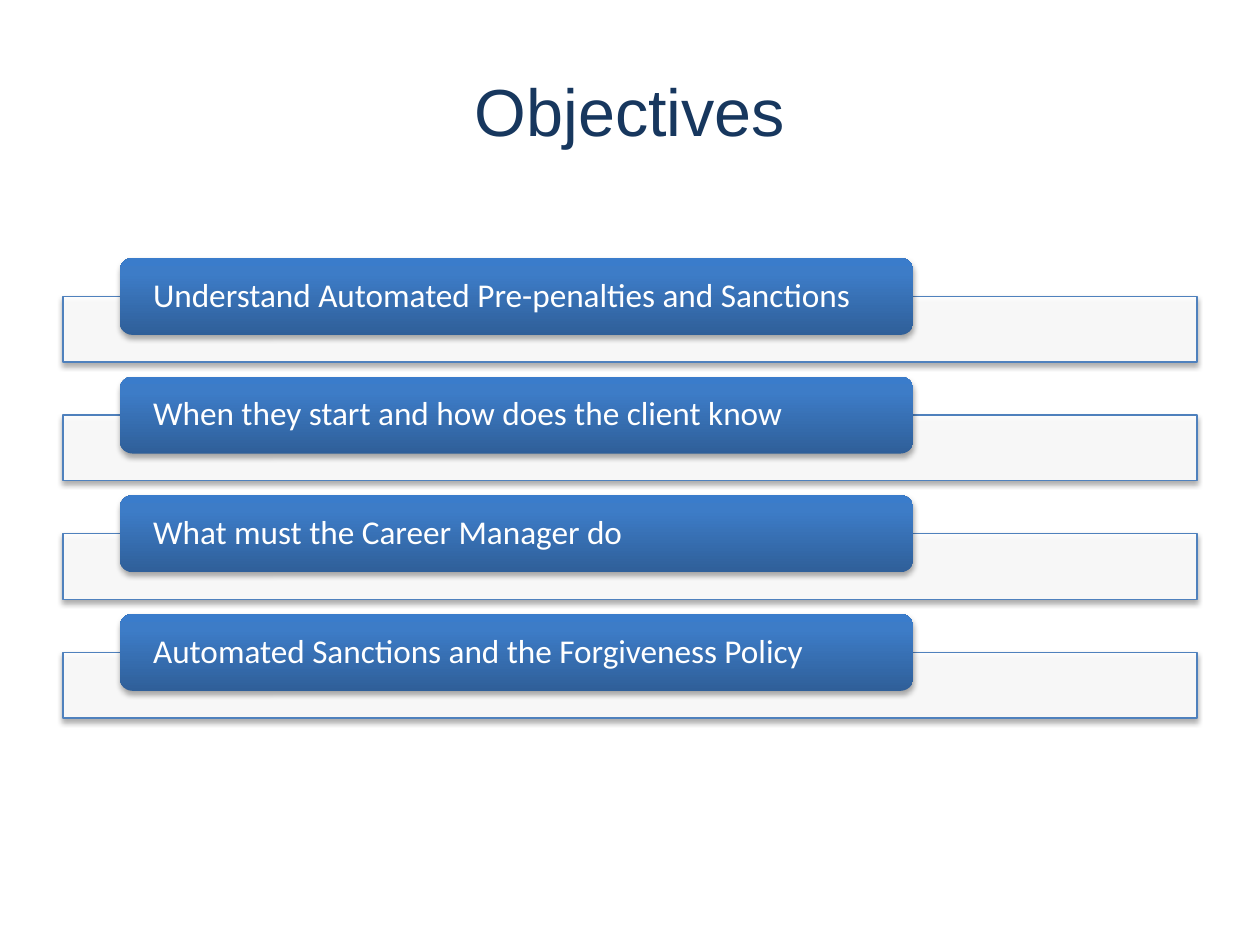
from lxml import etree
from pptx import Presentation
from pptx.dml.color import RGBColor
from pptx.enum.shapes import MSO_SHAPE as SHAPE
from pptx.enum.text import MSO_ANCHOR as ANCHOR, PP_ALIGN as ALIGN
from pptx.oxml.ns import qn
from pptx.util import Pt

OBJECTIVES = [
    "Understand Automated Pre-penalties and Sanctions",
    "When they start and how does the client know",
    "What must the Career Manager do",
    "Automated Sanctions and the Forgiveness Policy",
]
CARD_STOPS = [(0, "2F5F99"), (80, "3D7CC7"), (100, "3A7CCB")]
ROW_PITCH = 67.8


def rgb(color):
    return RGBColor.from_string(color)


def add_color(parent, color, alpha=None):
    clr = etree.SubElement(parent, qn("a:srgbClr"), val=color)
    if alpha is not None:
        etree.SubElement(clr, qn("a:alpha"), val=str(alpha * 1000))


def add_shadow(sp):
    sp.shadow.inherit = False
    effects = sp._element.spPr.find(qn("a:effectLst"))
    shadow = etree.SubElement(
        effects, qn("a:outerShdw"), blurRad=str(Pt(3.1)), dist=str(Pt(1.8)),
        dir="5400000", rotWithShape="0")
    add_color(shadow, "000000", 35)


def fill_gradient(sp, stops):
    """Fill from bottom to top with (percent, colour) stops."""
    sp.fill.gradient()
    sp.fill.gradient_angle = 90
    stop_list = sp._element.spPr.find(qn("a:gradFill")).find(qn("a:gsLst"))
    for old in list(stop_list):
        stop_list.remove(old)
    for percent, color in stops:
        add_color(etree.SubElement(stop_list, qn("a:gs"), pos=str(percent * 1000)), color)


def write_text(sp, text, size, font, color, align=ALIGN.LEFT, inset=0, spacing=1.0):
    tf = sp.text_frame
    tf.word_wrap = True
    tf.vertical_anchor = ANCHOR.MIDDLE
    tf.margin_left = tf.margin_right = Pt(inset)
    tf.margin_top = tf.margin_bottom = 0
    p = tf.paragraphs[0]
    p.alignment = align
    p.line_spacing = spacing
    r = p.add_run()
    r.text = text
    r.font.size = Pt(size)
    r.font.name = font
    r.font.color.rgb = rgb(color)


def add_title(slide, text, left, top, width, height):
    sp = slide.shapes.add_textbox(Pt(left), Pt(top), Pt(width), Pt(height))
    write_text(sp, text, size=38, font="Arial", color="17375E", align=ALIGN.CENTER)


def add_bar(slide, left, top, width, height):
    sp = slide.shapes.add_shape(SHAPE.RECTANGLE, Pt(left), Pt(top), Pt(width), Pt(height))
    sp.fill.solid()
    sp.fill.fore_color.rgb = rgb("FFFFFF")
    clr = sp._element.spPr.find(qn("a:solidFill"))[0]
    etree.SubElement(clr, qn("a:alpha"), val="90000")
    sp.line.color.rgb = rgb("4F81BD")
    sp.line.width = Pt(0.75)
    add_shadow(sp)


def add_card(slide, text, left, top, width, height):
    sp = slide.shapes.add_shape(SHAPE.ROUNDED_RECTANGLE, Pt(left), Pt(top), Pt(width), Pt(height))
    fill_gradient(sp, CARD_STOPS)
    sp.line.fill.background()
    add_shadow(sp)
    write_text(sp, text, size=19, font="Calibri", color="FFFFFF", inset=17, spacing=0.9)


def add_objectives(slide, items, left, top, width):
    """Stack one row per item: a wide bar with a card over its upper edge."""
    for i, text in enumerate(items):
        y = top + i * ROW_PITCH
        add_bar(slide, left, y + 22, width, 37.5)
        add_card(slide, text, left + width * 0.05, y, width * 0.7, 44)


def main():
    prs = Presentation()
    prs.slide_width, prs.slide_height = Pt(720), Pt(540)
    slide = prs.slides.add_slide(prs.slide_layouts[6])
    add_title(slide, "Objectives", 36, 30, 648, 66)
    add_objectives(slide, OBJECTIVES, 36, 147.4, 648)
    prs.save("out.pptx")


if __name__ == "__main__":
    main()
